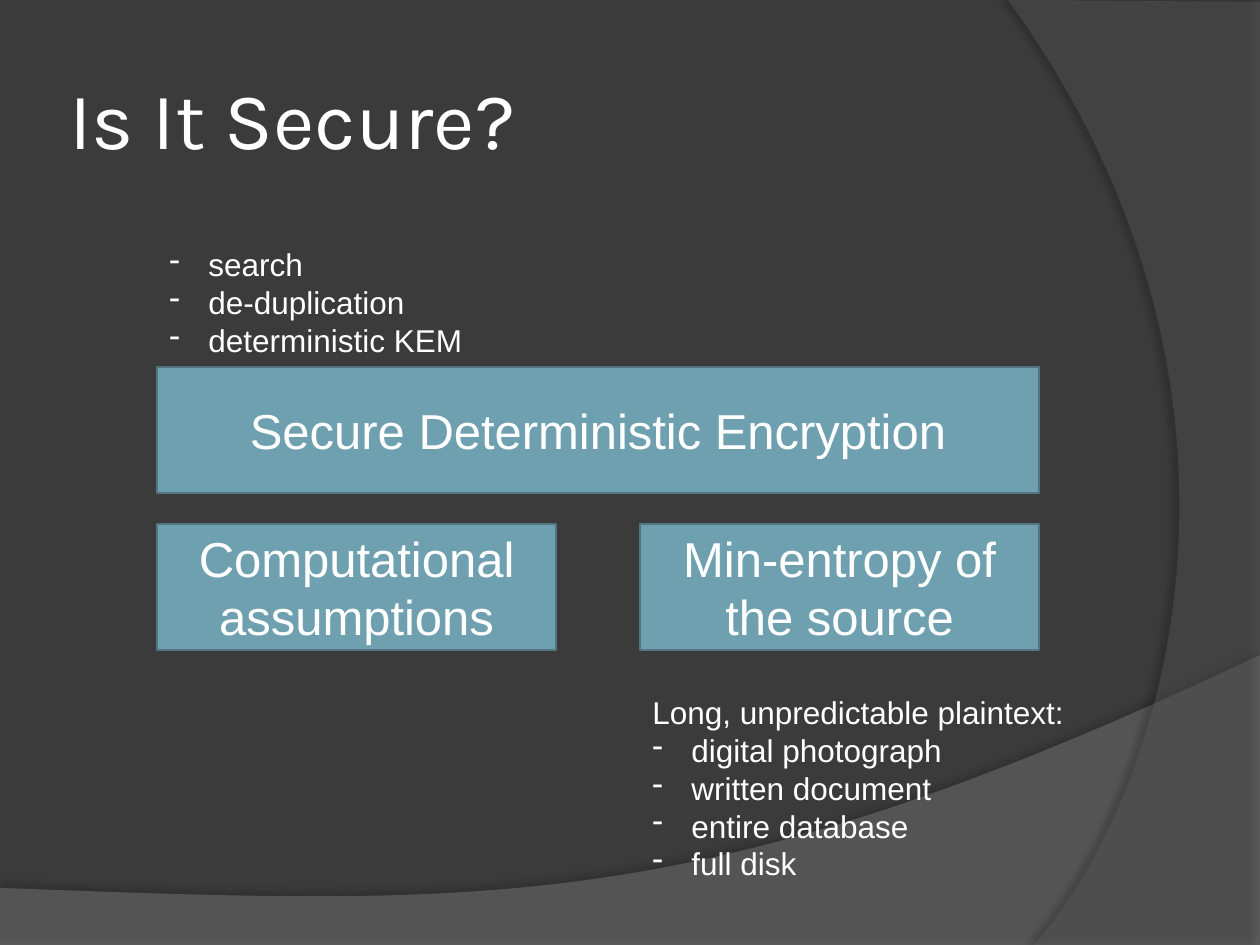
"""Build the slide 'Is It Secure?' on a dark background with two soft curves."""
from lxml.etree import SubElement
from pptx import Presentation
from pptx.dml.color import RGBColor
from pptx.enum.shapes import MSO_SHAPE as Shape
from pptx.enum.text import MSO_ANCHOR as Anchor, MSO_AUTO_SIZE as AutoSize, PP_ALIGN as Align
from pptx.oxml.ns import qn
from pptx.util import Emu, Pt

SCALE = 914400 / 126
WHITE = RGBColor(0xFF, 0xFF, 0xFF)
DARK = RGBColor(0x3B, 0x3B, 0x3B)
HILL = RGBColor(0x7F, 0x7F, 0x7F)
ARC = RGBColor(0x5E, 0x5E, 0x5E)
TEAL = RGBColor(0x6E, 0xA0, 0xB0)
TEAL_EDGE = RGBColor(0x51, 0x76, 0x82)
LEFT, RIGHT_COLUMN, FULL, HALF, BLOCK_HEIGHT = 157, 640, 882, 399, 126
INDENT = 39


def px(length):
    return Emu(round(length * SCALE))


def set_all(target, values):
    for name, value in values.items():
        setattr(target, name, value)


def bezier(start, first, second, end, steps=60):
    """Return points along a cubic curve."""
    points = []
    for step in range(steps + 1):
        t = step / steps
        weights = ((1 - t) ** 3, 3 * t * (1 - t) ** 2, 3 * t * t * (1 - t), t ** 3)
        points.append(tuple(
            sum(w * p for w, p in zip(weights, axis))
            for axis in zip(start, first, second, end)))
    return points


def add_curve(page, points, color, opacity, shadow):
    corners = [(px(x), px(y)) for x, y in points]
    builder = page.shapes.build_freeform(*corners[0])
    builder.add_line_segments(corners[1:], close=True)
    shape = builder.convert_to_shape()
    shape.fill.solid()
    shape.fill.fore_color.rgb = color
    shape.line.fill.background()
    shape.shadow.inherit = False
    properties = shape.element.spPr
    tint = properties.find(qn("a:solidFill")).find(qn("a:srgbClr"))
    SubElement(tint, qn("a:alpha"), val=str(opacity * 1000))
    strength, blur, distance, angle = shadow
    outer = SubElement(
        properties.find(qn("a:effectLst")), qn("a:outerShdw"), blurRad=str(Pt(blur)),
        dist=str(Pt(distance)), dir=str(angle * 60000), algn="ctr", rotWithShape="0")
    shade = SubElement(outer, qn("a:srgbClr"), val="000000")
    SubElement(shade, qn("a:alpha"), val=str(strength * 1000))
    return shape


def write(para, text, size, font="Arial"):
    span = para.add_run()
    span.text = text
    set_all(span.font, {"size": Pt(size), "name": font})
    span.font.color.rgb = WHITE


def set_title(page, text):
    title = page.shapes.title
    set_all(title, {"left": px(63), "top": px(38), "width": px(1029), "height": px(158)})
    frame = title.text_frame
    set_all(frame, {"vertical_anchor": Anchor.MIDDLE, "auto_size": AutoSize.NONE})
    sides = ("left", "top", "right", "bottom")
    set_all(frame, {f"margin_{side}": px(6) for side in sides})
    para = frame.paragraphs[0]
    para.alignment = Align.LEFT
    write(para, text, 46, "Karla")
    return title


def add_block(page, text, left, top, width):
    block = page.shapes.add_shape(
        Shape.RECTANGLE, px(left), px(top), px(width), px(BLOCK_HEIGHT))
    block.shadow.inherit = False
    block.fill.solid()
    block.fill.fore_color.rgb = TEAL
    block.line.color.rgb = TEAL_EDGE
    block.line.width = Pt(1.5)
    set_all(block.text_frame, {"vertical_anchor": Anchor.MIDDLE, "word_wrap": True})
    para = block.text_frame.paragraphs[0]
    para.alignment = Align.CENTER
    write(para, text, 28)


def add_list(page, area, items, heading=None):
    box = page.shapes.add_textbox(*map(px, area))
    frame = box.text_frame
    set_all(frame, {"word_wrap": False, "auto_size": AutoSize.SHAPE_TO_FIT_TEXT})
    lines = ([heading] if heading else []) + items
    for index, text in enumerate(lines):
        para = frame.add_paragraph() if index else frame.paragraphs[0]
        write(para, text, 18)
        if text != heading:
            properties = para._p.get_or_add_pPr()
            properties.set("marL", str(px(INDENT)))
            properties.set("indent", str(-px(INDENT)))
            SubElement(properties, qn("a:buFontTx"))
            SubElement(properties, qn("a:buChar"), char="-")


def main():
    deck = Presentation()
    deck.slide_width, deck.slide_height = px(1260), px(945)
    page = deck.slides.add_slide(deck.slide_layouts[5])
    page.background.fill.solid()
    page.background.fill.fore_color.rgb = DARK

    hill = bezier((1260, 655), (704, 919), (493, 906), (0, 888))
    add_curve(page, hill + [(0, 946), (1260, 946)], HILL, 45, (35, 4, 3.5, 270))
    arc = bezier((1034, 945), (1178, 780), (1283, 378), (1008, 0))
    front = add_curve(page, arc + [(1260, 2), (1260, 945)], ARC, 40, (45, 4, 4, 180))
    front.element.addnext(set_title(page, "Is It Secure?").element)

    add_block(page, "Computational assumptions", LEFT, 524, HALF)
    add_block(page, "Min-entropy of the source", RIGHT_COLUMN, 524, HALF)
    add_block(page, "Secure Deterministic Encryption", LEFT, 367, FULL)

    add_list(page, (RIGHT_COLUMN, 687, 441, 204),
             ["digital photograph", "written document", "entire database", "full disk"],
             "Long, unpredictable plaintext:")
    add_list(page, (LEFT, 239, 321, 127), ["search", "de-duplication", "deterministic KEM"])
    deck.save("out.pptx")


if __name__ == "__main__":
    main()
